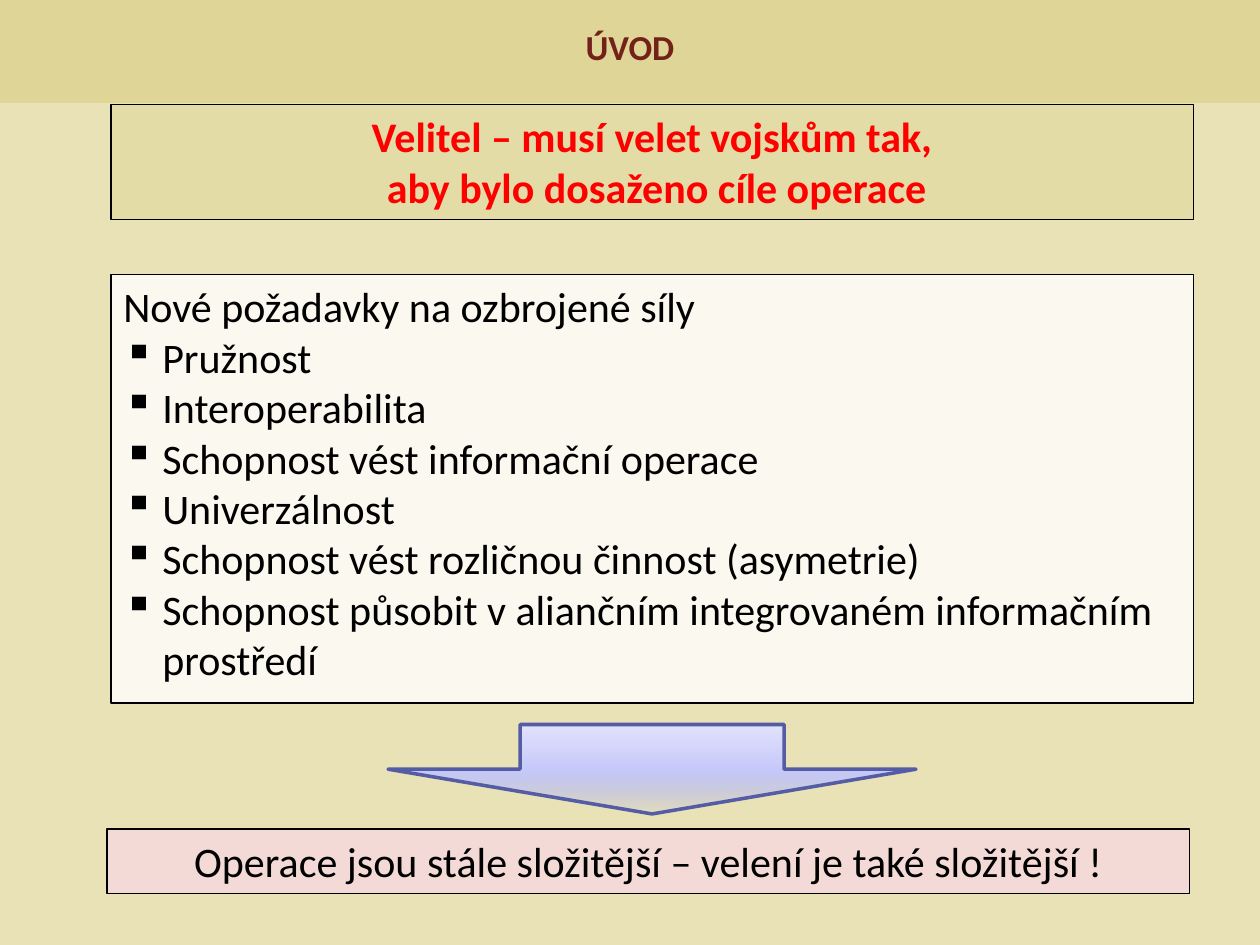
from lxml import etree
from pptx import Presentation
from pptx.dml.color import RGBColor
from pptx.enum import shapes, text
from pptx.oxml import ns
from pptx.util import Inches, Pt

TITLE = "ÚVOD"
GOAL = ["Velitel – musí velet vojskům tak,", " aby bylo dosaženo cíle operace"]
NEEDS = "Nové požadavky na ozbrojené síly"
ITEMS = [
    "Pružnost",
    "Interoperabilita",
    "Schopnost vést informační operace",
    "Univerzálnost",
    "Schopnost vést rozličnou činnost (asymetrie)",
    "Schopnost působit v aliančním integrovaném informačním prostředí",
]
RESULT = "Operace jsou stále složitější – velení je také složitější !"

# Arrow gradient: position %, colour, opacity %
STOPS = [(0, "A2A9FC", 4), (50, "C6C9FC", 100), (100, "E3E4FD", 100)]
INDENT = Inches(0.31)
WIDE = 8.59


def paint(fmt, code):
    fmt.solid()
    fmt.fore_color.rgb = RGBColor.from_string(code)


def add(parent, tag, **attrs):
    node = etree.SubElement(parent, ns.qn(tag))
    for key, val in attrs.items():
        node.set(key, str(val))
    return node


def write(shape, lines, size=24, color="000000", bold=False, center=True,
          first=None, space=None, anchor=text.MSO_ANCHOR.TOP):
    """Fill a shape with lines; those from index `first` on get bullets."""
    frame = shape.text_frame
    frame.word_wrap = True
    frame.auto_size = text.MSO_AUTO_SIZE.SHAPE_TO_FIT_TEXT
    frame.vertical_anchor = anchor
    for i, line in enumerate(lines):
        para = frame.add_paragraph() if i else frame.paragraphs[0]
        para.text = line
        para.alignment = text.PP_ALIGN.CENTER if center else text.PP_ALIGN.LEFT
        if space:
            para.line_spacing = space
        if first is not None and i >= first:
            props = para._p.get_or_add_pPr()
            props.set("marL", str(INDENT))
            props.set("indent", str(-INDENT))
            add(props, "a:buChar", char="▪")
        font = para.runs[0].font
        font.name, font.size, font.bold = "Calibri", Pt(size), bold
        font.color.rgb = RGBColor.from_string(color)


def draw(kind, left, top, width, height, line, weight):
    shape = slide.shapes.add_shape(
        kind, Inches(left), Inches(top), Inches(width), Inches(height))
    shape.shadow.inherit = False
    paint(shape.line.fill, line)
    shape.line.width = Pt(weight)
    return shape


def box(left, top, height, fill, lines, **style):
    shape = draw(shapes.MSO_SHAPE.RECTANGLE, left, top, WIDE, height,
                 "000000", 0.75)
    paint(shape.fill, fill)
    write(shape, lines, **style)


deck = Presentation()
deck.slide_width, deck.slide_height = Inches(10), Inches(7.5)
slide = deck.slides.add_slide(deck.slide_layouts[5])
paint(slide.background.fill, "E9E2B6")

# Title band
title = slide.shapes.title
title.left, title.top = Inches(0), Inches(0.21)
title.width, title.height = Inches(10), Inches(0.38)
paint(title.fill, "DFD596")
write(title, [TITLE], size=20, color="722219", bold=True, space=0.8,
      anchor=text.MSO_ANCHOR.MIDDLE)

# Text boxes
box(0.88, 0.83, 0.91, "E4DCA6", GOAL, color="FF0000", bold=True)
box(0.88, 2.18, 3.4, "FAF8EF", [NEEDS] + ITEMS, center=False, first=1)
box(0.85, 6.58, 0.51, "F3DAD7", [RESULT])

# Arrow fading out towards its tip
arrow = draw(shapes.MSO_SHAPE.DOWN_ARROW, 3.08, 5.75, 4.19, 0.71, "545CA6", 2)
arrow.fill.gradient()
arrow.fill.gradient_angle = 90
stops = arrow._element.spPr.find(ns.qn("a:gradFill")).find(ns.qn("a:gsLst"))
for old in list(stops):
    stops.remove(old)
for pos, code, alpha in STOPS:
    color = add(add(stops, "a:gs", pos=pos * 1000), "a:srgbClr", val=code)
    if alpha < 100:
        add(color, "a:alpha", val=alpha * 1000)

deck.save("out.pptx")
